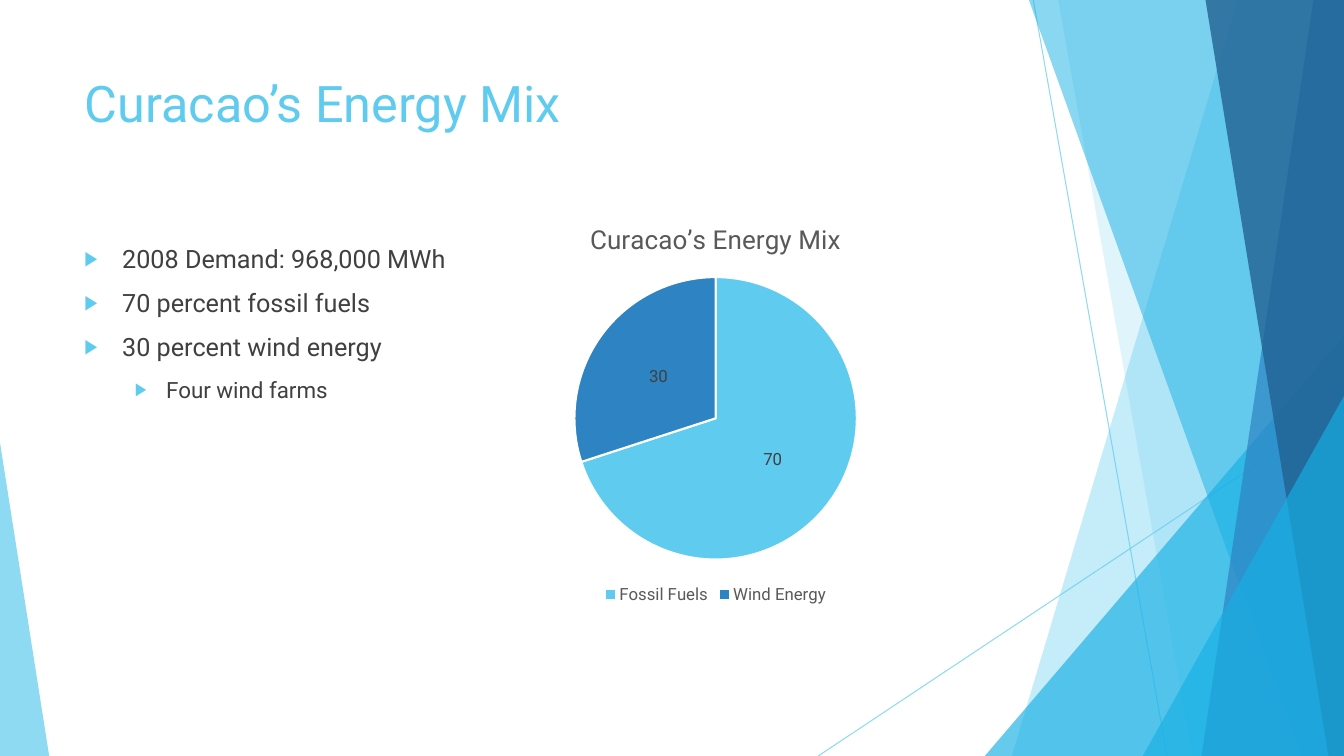
from lxml.etree import SubElement
from pptx import Presentation
from pptx.chart.data import CategoryChartData
from pptx.dml.color import RGBColor
from pptx.enum.chart import XL_CHART_TYPE, XL_LABEL_POSITION, XL_LEGEND_POSITION
from pptx.enum.shapes import MSO_CONNECTOR, MSO_SHAPE
from pptx.enum.text import MSO_ANCHOR, PP_ALIGN
from pptx.oxml.ns import qn
from pptx.util import Cm, Pt

FONT = "Roboto"
WIDTH, HEIGHT = 33.87, 19.05
COLORS = {
    "sky": "5FCBEF",
    "cyan": "17B0E4",
    "blue": "2E83C3",
    "navy": "226292",
    "text": "404040",
    "chart_text": "595959",
    "white": "FFFFFF",
}


def rgb(name):
    """Return the named palette colour."""
    return RGBColor.from_string(COLORS[name])


def style_font(font, size, color):
    """Set typeface, size and colour of a font."""
    font.name = FONT
    font.size = Pt(size)
    font.bold = False
    font.color.rgb = rgb(color)


def set_opacity(shape, percent):
    """Make the solid colour of a shape partly transparent."""
    for color in shape._element.spPr.iter(qn("a:srgbClr")):
        SubElement(color, qn("a:alpha")).set("val", str(percent * 1000))


def paint_facet(facet, color, opacity):
    """Fill a facet with a translucent colour and no outline."""
    facet.shadow.inherit = False
    facet.fill.solid()
    facet.fill.fore_color.rgb = rgb(color)
    facet.line.fill.background()
    set_opacity(facet, opacity)


def add_ray(slide, x1, y1, x2, y2):
    """Draw one thin translucent line."""
    ray = slide.shapes.add_connector(
        MSO_CONNECTOR.STRAIGHT, Cm(x1), Cm(y1), Cm(x2), Cm(y2))
    ray.line.color.rgb = rgb("sky")
    ray.line.width = Pt(0.75)
    SubElement(ray._element.spPr, qn("a:effectLst"))
    set_opacity(ray, 70)


def add_band(slide, top_x, bottom_x, color, opacity):
    """Draw a full-height band from a slanted edge to the right slide edge."""
    outline = slide.shapes.build_freeform(Cm(top_x), Cm(0))
    outline.add_line_segments(
        [(Cm(WIDTH), Cm(0)), (Cm(WIDTH), Cm(HEIGHT)), (Cm(bottom_x), Cm(HEIGHT))])
    paint_facet(outline.convert_to_shape(), color, opacity)


def add_corner(slide, left, top, width, apex, color, opacity):
    """Draw a right triangle standing on the bottom slide edge."""
    corner = slide.shapes.add_shape(
        MSO_SHAPE.ISOSCELES_TRIANGLE, Cm(left), Cm(top), Cm(width), Cm(HEIGHT - top))
    corner.adjustments[0] = apex
    paint_facet(corner, color, opacity)


def add_backdrop(slide):
    """Layer the rays, bands and corners from back to front."""
    add_ray(slide, 26.04, 0, 29.41, HEIGHT)
    add_ray(slide, WIDTH, 10.24, 20.62, HEIGHT)
    add_band(slide, 31.19, 25.5, "sky", 36)
    add_band(slide, 26.67, 30.05, "sky", 20)
    add_corner(slide, 24.82, 8.46, 9.05, 1, "cyan", 66)
    add_band(slide, 25.93, 32.79, "cyan", 50)
    add_band(slide, 33.1, 30.28, "blue", 70)
    add_band(slide, 30.38, 33.48, "navy", 80)
    add_corner(slide, 28.8, 9.98, 5.07, 1, "cyan", 66)
    add_corner(slide, 0, 11.15, 1.24, 0, "sky", 70)


def add_title(slide, left, top, width, height):
    """Place and format the title in front of the backdrop."""
    title = slide.shapes.title
    title._element.getparent().append(title._element)
    title.left, title.top, title.width, title.height = map(
        Cm, (left, top, width, height))
    title.text_frame.vertical_anchor = MSO_ANCHOR.TOP
    heading = title.text_frame.paragraphs[0]
    heading.alignment = PP_ALIGN.LEFT
    run = heading.add_run()
    run.text = "Curacao’s Energy Mix"
    style_font(run.font, 36, "sky")


def add_bullet(paragraph, margin, hanging):
    """Give a paragraph a hanging triangle bullet."""
    properties = paragraph._p.get_or_add_pPr()
    properties.set("marL", str(Cm(margin)))
    properties.set("indent", str(-Cm(hanging)))
    bullet_color = SubElement(properties, qn("a:buClr"))
    SubElement(bullet_color, qn("a:srgbClr")).set("val", COLORS["sky"])
    SubElement(properties, qn("a:buSzPct")).set("val", "80000")
    SubElement(properties, qn("a:buFont")).set("typeface", "Arial")
    SubElement(properties, qn("a:buChar")).set("char", "▶")


def add_facts(slide, left, top, width, height):
    """Write the bulleted energy facts."""
    frame = slide.shapes.add_textbox(
        Cm(left), Cm(top), Cm(width), Cm(height)).text_frame
    frame.word_wrap = True
    facts = [
        ("2008 Demand: 968,000 MWh", 0),
        ("70 percent fossil fuels", 0),
        ("30 percent wind energy", 0),
        ("Four wind farms", 1),
    ]
    levels = [(0.95, 0.95, 18), (2.06, 0.79, 16)]
    for number, (fact, level) in enumerate(facts):
        paragraph = frame.add_paragraph() if number else frame.paragraphs[0]
        margin, hanging, size = levels[level]
        paragraph.level = level
        add_bullet(paragraph, margin, hanging)
        if number:
            paragraph.space_before = Pt(10)
        run = paragraph.add_run()
        run.text = fact
        style_font(run.font, size, "text")


def add_mix_chart(slide, left, top, width, height):
    """Add the pie chart of energy sources."""
    mix = CategoryChartData()
    mix.categories = ["Fossil Fuels", "Wind Energy"]
    mix.add_series("Series 1", (70, 30))
    chart = slide.shapes.add_chart(
        XL_CHART_TYPE.PIE, Cm(left), Cm(top), Cm(width), Cm(height), mix).chart
    style_font(chart.font, 12, "chart_text")

    chart.has_title = True
    run = chart.chart_title.text_frame.paragraphs[0].add_run()
    run.text = "Curacao’s Energy Mix"
    style_font(run.font, 18.6, "chart_text")
    chart.chart_title.include_in_layout = False

    chart.has_legend = True
    chart.legend.position = XL_LEGEND_POSITION.BOTTOM
    chart.legend.include_in_layout = False
    style_font(chart.legend.font, 12, "chart_text")

    pie = chart.plots[0]
    pie.vary_by_categories = True
    pie.has_data_labels = True
    labels = pie.data_labels
    labels.show_value = True
    labels.show_percentage = False
    labels.position = XL_LABEL_POSITION.CENTER
    style_font(labels.font, 12, "text")
    for index, color in enumerate(("sky", "blue")):
        slice_format = pie.series[0].points[index].format
        slice_format.fill.solid()
        slice_format.fill.fore_color.rgb = rgb(color)
        slice_format.line.color.rgb = rgb("white")
        slice_format.line.width = Pt(1.5)


def main():
    """Build and save the energy mix slide."""
    deck = Presentation()
    deck.slide_width, deck.slide_height = Cm(WIDTH), Cm(HEIGHT)
    slide = deck.slides.add_slide(deck.slide_layouts[5])
    add_backdrop(slide)
    add_title(slide, 1.88, 1.7, 23.88, 3.66)
    add_facts(slide, 1.88, 6, 23.88, 10.77)
    add_mix_chart(slide, 11.61, 5.13, 12.85, 10.21)
    deck.save("out.pptx")


if __name__ == "__main__":
    main()
